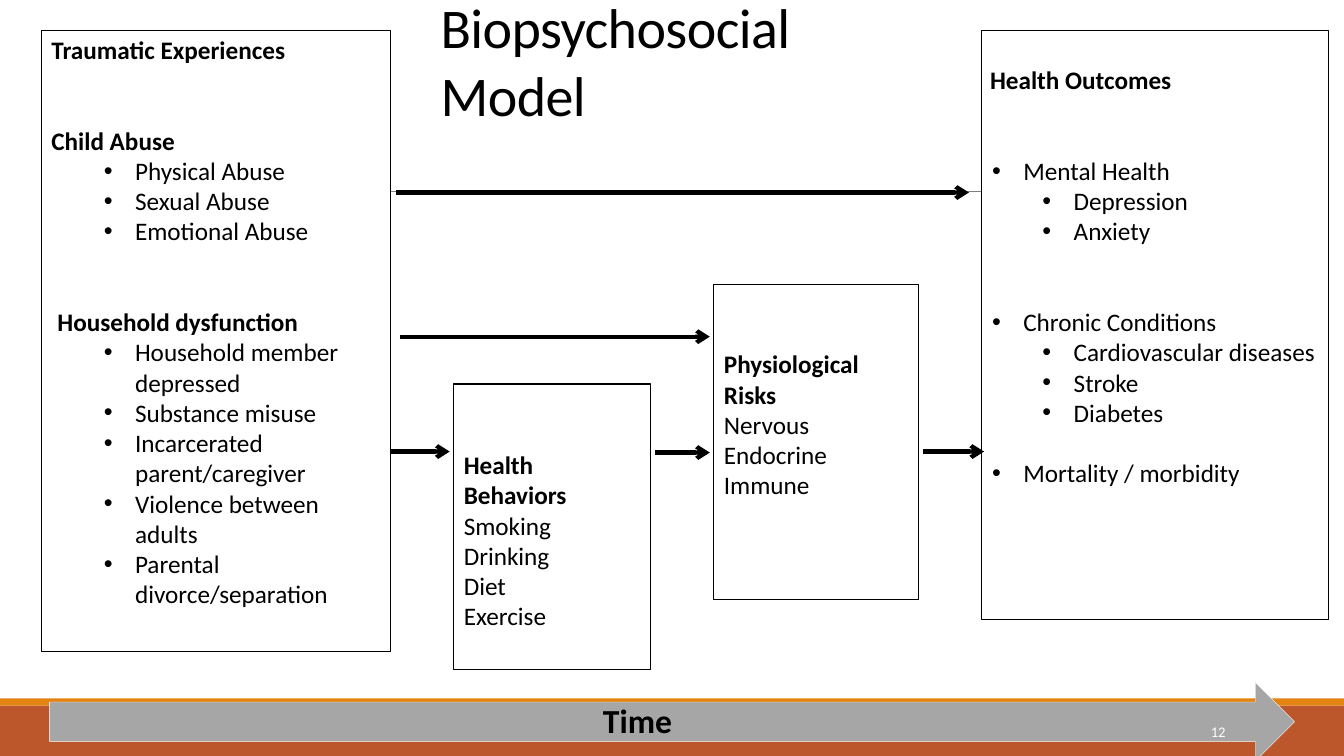
import pptx
import pptx.dml.color
import pptx.enum.shapes
import pptx.enum.text
import pptx.oxml.ns
import pptx.util
from dataclasses import dataclass
from lxml import etree

SHAPE = pptx.enum.shapes.MSO_SHAPE
qn = pptx.oxml.ns.qn


@dataclass(frozen=True)
class Theme:
    font: str = "Calibri"
    bullet_font: str = "Arial"
    ink: str = "000000"
    paper: str = "FFFFFF"
    rule: str = "7E7E7E"
    band: str = "BC572C"
    stripe: str = "E38312"
    time: str = "A6A6A6"
    title: float = 40
    label: float = 24
    body: float = 18
    number: float = 10.5
    thin: float = 0.75
    arrow: float = 3


class Board:
    """Draws on one slide; lengths are grid cells, 75 rows to the height."""

    ROWS = 75

    def __init__(self, prs, theme):
        self.theme = theme
        self.cell = prs.slide_height / self.ROWS
        self.slide = prs.slides.add_slide(prs.slide_layouts[6])
        self.shapes = self.slide.shapes

    def cells(self, *counts):
        return [pptx.util.Emu(round(n * self.cell)) for n in counts]

    def rgb(self, colour):
        return pptx.dml.color.RGBColor.from_string(colour)

    def shape(self, x, y, w, h, fill=None, line=None, width=0.75, kind=SHAPE.RECTANGLE):
        sp = self.shapes.add_shape(kind, *self.cells(x, y, w, h))
        sp.shadow.inherit = False
        if fill:
            sp.fill.solid()
            sp.fill.fore_color.rgb = self.rgb(fill)
        else:
            sp.fill.background()
        if line:
            sp.line.color.rgb = self.rgb(line)
            sp.line.width = pptx.util.Pt(width)
        else:
            sp.line.fill.background()
        return sp

    def line(self, x1, x2, y, colour, width, head=False):
        cx = self.shapes.add_connector(
            pptx.enum.shapes.MSO_CONNECTOR.STRAIGHT, *self.cells(x1, y, x2, y))
        cx.line.color.rgb = self.rgb(colour)
        cx.line.width = pptx.util.Pt(width)
        sp_pr = cx._element.spPr
        if head:
            etree.SubElement(sp_pr.find(qn("a:ln")), qn("a:tailEnd"), type="arrow")
        etree.SubElement(sp_pr, qn("a:effectLst"))

    def bullet(self, p):
        indent, hang = self.cells(3.3, 3.1)
        p_pr = p._p.get_or_add_pPr()
        p_pr.set("marL", str(indent))
        p_pr.set("indent", str(-hang))
        etree.SubElement(p_pr, qn("a:buFont"), typeface=self.theme.bullet_font)
        etree.SubElement(p_pr, qn("a:buChar"), char="•")

    def text(self, x, y, w, h, lines, bold=0, bullets=False, size=None,
             colour=None, spacing=0):
        """One paragraph a line; the first `bold` lines are bold."""
        tf = self.shapes.add_textbox(*self.cells(x, y, w, h)).text_frame
        tf.word_wrap = True
        tf.margin_left, tf.margin_top = self.cells(0.1, 0.2)
        tf.margin_right = tf.margin_bottom = 0
        tf.vertical_anchor = pptx.enum.text.MSO_ANCHOR.TOP
        for i, line in enumerate(lines):
            p = tf.paragraphs[0] if i == 0 else tf.add_paragraph()
            if bullets:
                self.bullet(p)
            r = p.add_run()
            r.text = line
            r.font.name = self.theme.font
            r.font.size = pptx.util.Pt(size or self.theme.body)
            r.font.bold = i < bold
            r.font.color.rgb = self.rgb(colour or self.theme.ink)
            if spacing:
                r._r.get_or_add_rPr().set("spc", str(spacing))


def main():
    prs = pptx.Presentation()
    prs.slide_width = pptx.util.Inches(13.33)
    prs.slide_height = pptx.util.Inches(7.5)
    t = Theme()
    b = Board(prs, t)

    # Footer bands
    b.shape(0, 70, 133.3, 5, fill=t.band)
    b.shape(0, 69.3, 133.3, 0.7, fill=t.stripe)

    # Frames: experiences, outcomes, physiological risks, behaviours
    b.line(38.7, 97.3, 19, t.rule, 0.5)
    for frame in [(4.1, 3, 34.6, 61.6), (97.3, 3, 34.5, 58.5),
                  (70.8, 28.2, 20.3, 31.3), (45, 38.1, 19.5, 28.3)]:
        b.shape(*frame, line=t.ink, width=t.thin)

    # Bold headings
    for x, y, heading in [(5, 3.2, "Traumatic Experiences"),
                          (5, 12.2, "Child Abuse"),
                          (5.6, 30.2, "Household dysfunction"),
                          (98.1, 6.2, "Health Outcomes")]:
        b.text(x, y, 27, 3.3, [heading], bold=1)

    # Bulleted lists
    for x, y, w, items in [
        (10, 15.2, 23.6, ["Physical Abuse", "Sexual Abuse", "Emotional Abuse"]),
        (10, 33.2, 23.6, ["Household member depressed", "Substance misuse",
                          "Incarcerated parent/caregiver",
                          "Violence between adults",
                          "Parental divorce/separation"]),
        (98.1, 15.2, 28, ["Mental Health"]),
        (103.1, 18.2, 28, ["Depression", "Anxiety"]),
        (98.1, 30.2, 28, ["Chronic Conditions"]),
        (103.1, 33.2, 28, ["Cardiovascular diseases", "Stroke", "Diabetes"]),
        (98.1, 45.2, 28, ["Mortality / morbidity"]),
    ]:
        b.text(x, y, w, 3 * len(items) + 0.3, items, bullets=True)

    # Middle boxes
    b.text(71.7, 34.4, 14.5, 15.3,
           ["Physiological Risks", "Nervous", "Endocrine", "Immune"], bold=1)
    b.text(45.9, 44.4, 11.5, 18.3,
           ["Health Behaviors", "Smoking", "Drinking", "Diet", "Exercise"], bold=1)

    # Causal arrows
    for x1, x2, y in [(39.3, 96.1, 19.1), (39.7, 70.4, 33.4), (38.7, 44.6, 44.8),
                      (65, 70.4, 44.9), (91.5, 97.6, 44.8)]:
        b.line(x1, x2, y, t.ink, t.arrow, head=True)

    # Title
    b.text(43.6, -0.9, 46, 13.8, ["Biopsychosocial Model"], size=t.title, spacing=-40)

    # Time arrow and slide number
    b.shape(4.9, 67.7, 123.5, 7.8, fill=t.time, line=t.paper, width=0.25,
            kind=SHAPE.RIGHT_ARROW)
    b.text(59.7, 69.2, 9, 4.3, ["Time"], bold=1, size=t.label)
    b.text(120, 71.5, 3, 2, ["12"], size=t.number, colour=t.paper)

    prs.save("out.pptx")


if __name__ == "__main__":
    main()
